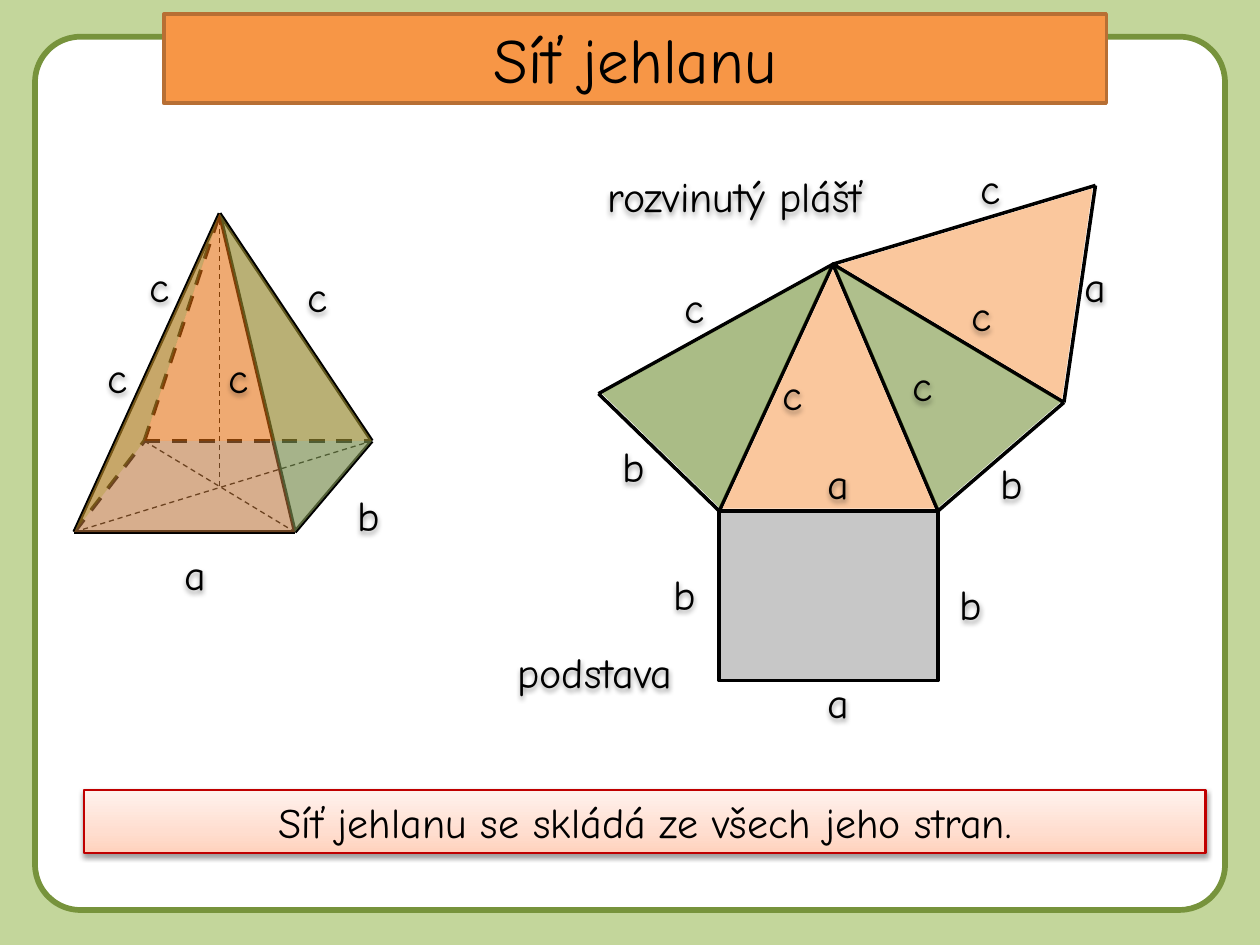
from copy import deepcopy
from dataclasses import dataclass

from lxml import etree
from pptx import Presentation
from pptx.dml.color import RGBColor
from pptx.enum.dml import MSO_LINE
from pptx.enum.shapes import MSO_CONNECTOR, MSO_SHAPE
from pptx.enum.text import MSO_ANCHOR, PP_ALIGN
from pptx.oxml.ns import qn
from pptx.util import Pt

STRAIGHT = MSO_CONNECTOR.STRAIGHT
RECT = MSO_SHAPE.RECTANGLE
ROUNDED = MSO_SHAPE.ROUNDED_RECTANGLE
DASH = MSO_LINE.DASH
CENTER = PP_ALIGN.CENTER
MIDDLE = MSO_ANCHOR.MIDDLE


@dataclass(frozen=True)
class Theme:
    font: str = "Comic Neue"
    title_size: int = 36
    body_size: int = 24
    ink: str = "000000"
    page: str = "C3D69B"
    panel: str = "FFFFFF"
    green: str = "77933C"
    orange: str = "F79646"
    brown: str = "B76F34"
    deep_orange: str = "E46C0A"
    peach: str = "FAC090"
    gray: str = "808080"
    red: str = "C00000"
    banner: tuple = ((0, "FFD2BD"), (0.35, "FFDED0"), (1, "FFF2ED"))


THEME = Theme()
LABEL_HEIGHT = 36
LABEL_WIDTHS = {"a": 34, "b": 28, "c": 50, "rozvinutý plášť": 210, "podstava": 142}


def rgb(value):
    return RGBColor.from_string(value)


def style_line(sp, color, width, dash=None):
    sp.line.color.rgb = rgb(color)
    sp.line.width = Pt(width)
    if dash:
        sp.line.dash_style = dash


def style_fill(sp, color, alpha=100):
    sp.fill.solid()
    sp.fill.fore_color.rgb = rgb(color)
    if alpha < 100:
        clr = sp._element.spPr.find(qn("a:solidFill"))[0]
        etree.SubElement(clr, qn("a:alpha"), val=str(alpha * 1000))


def add_shadow(sp):
    sp.shadow.inherit = False
    effects = sp._element.spPr.find(qn("a:effectLst"))
    shadow = etree.SubElement(effects, qn("a:outerShdw"), blurRad=str(Pt(3.1)),
                              dist=str(Pt(1.6)), dir="5400000", rotWithShape="0")
    clr = etree.SubElement(shadow, qn("a:srgbClr"), val=THEME.ink)
    etree.SubElement(clr, qn("a:alpha"), val="38000")


def set_text(sp, text, size):
    tf = sp.text_frame
    tf.text = text
    tf.word_wrap = True
    tf.vertical_anchor = MIDDLE
    p = tf.paragraphs[0]
    p.alignment = CENTER
    font = p.runs[0].font
    font.name = THEME.font
    font.size = Pt(size)
    font.color.rgb = rgb(THEME.ink)


def add_box(shapes, kind, x, y, w, h):
    sp = shapes.add_shape(kind, Pt(x), Pt(y), Pt(w), Pt(h))
    sp.shadow.inherit = False
    return sp


def add_edge(shapes, start, end, width, dash=None):
    line = shapes.add_connector(STRAIGHT, *(Pt(v) for v in start + end))
    style_line(line, THEME.ink, width, dash)
    etree.SubElement(line._element.spPr, qn("a:effectLst"))


def add_path(shapes, points, close):
    first, *rest = [(Pt(x), Pt(y)) for x, y in points]
    builder = shapes.build_freeform(*first)
    builder.add_line_segments(rest, close=close)
    sp = builder.convert_to_shape()
    sp.shadow.inherit = False
    return sp


def add_face(shapes, points, color, alpha):
    sp = add_path(shapes, points, True)
    style_fill(sp, color, alpha)
    sp.line.fill.background()


def add_labels(shapes, left, top, labels):
    for text, x, y in labels:
        sp = shapes.add_textbox(Pt(left + x), Pt(top + y),
                                Pt(LABEL_WIDTHS[text]), Pt(LABEL_HEIGHT))
        set_text(sp, text, THEME.body_size)
        add_shadow(sp)


def place(points, left, top):
    return {name: (left + x, top + y) for name, (x, y) in points.items()}


def inset(points, factor=0.97):
    cx, cy = (sum(axis) / len(points) for axis in zip(*points))
    return [(cx + (x - cx) * factor, cy + (y - cy) * factor) for x, y in points]


def draw_panel(s, x, y, w, h):
    sp = add_box(s.shapes, ROUNDED, x, y, w, h)
    sp.adjustments[0] = 0.052
    style_fill(sp, THEME.panel)
    style_line(sp, THEME.green, 3.25)


def draw_title(s, x, y, w, h):
    sp = s.shapes.title
    s.shapes._spTree.append(sp._element)
    sp.left, sp.top, sp.width, sp.height = (Pt(v) for v in (x, y, w, h))
    style_fill(sp, THEME.orange)
    style_line(sp, THEME.brown, 2)
    set_text(sp, "Síť jehlanu", THEME.title_size)


def draw_pyramid(s, left, top):
    v = place({"A": (0, 182), "B": (126, 182), "C": (170, 130), "D": (40, 130),
               "V": (83, 0), "S": (83, 156)}, left, top)
    group = s.shapes.add_group_shape().shapes
    for names, width, dash in (("AB BC AV BV CV", 2.25, None),
                               ("DC AD DV", 2.25, DASH),
                               ("AC DB SV", 0.75, DASH)):
        for start, end in names.split():
            add_edge(group, v[start], v[end], width, dash)
    for names, color, alpha in (("ABCD", THEME.gray, 36), ("ADV", THEME.green, 51),
                                ("DCV", THEME.deep_orange, 35),
                                ("ABV", THEME.deep_orange, 34),
                                ("BCV", THEME.green, 47)):
        add_face(s.shapes, [v[n] for n in names], color, alpha)
    add_labels(s.shapes, left, top, (
        ("a", 52, 188), ("b", 154, 154), ("c", 114, 29),
        ("c", 69, 75), ("c", 0, 75), ("c", 24, 23)))


def draw_net(s, left, top):
    v = place({"V": (134, 45), "P": (0, 119), "Q": (69, 186), "R": (194, 186),
               "S": (266, 124), "T": (284, 0)}, left, top)
    base = add_box(s.shapes, RECT, *v["Q"], 125, 97)
    style_fill(base, THEME.gray, 44)
    style_line(base, THEME.ink, 2)
    faces = (("PVQ", THEME.green, 62), ("RVS", THEME.green, 59),
             ("QVR", THEME.peach, 88), ("TVS", THEME.peach, 88))
    for names, _, _ in faces:
        points = [v[n] for n in names]
        group = s.shapes.add_group_shape().shapes
        sides = add_path(group, points, False)
        sides.fill.background()
        style_line(sides, THEME.ink, 2)
        add_edge(group, points[0], points[2], 2)
    for names, color, alpha in faces:
        add_face(s.shapes, inset([v[n] for n in names]), color, alpha)
    add_labels(s.shapes, left, top, (
        ("rozvinutý plášť", -27, -12), ("podstava", -73, 260),
        ("a", 120, 277), ("b", 199, 221), ("c", 86, 101), ("c", 30, 51),
        ("c", 199, -17), ("c", 194, 56), ("c", 160, 96), ("b", 222, 152),
        ("b", 6, 142), ("a", 267, 39), ("a", 120, 152), ("b", 35, 215)))


def draw_banner(s, x, y, w, h):
    sp = add_box(s.shapes, RECT, x, y, w, h)
    sp.fill.gradient()
    sp.fill.gradient_angle = 90
    stops = sp._element.spPr.find(qn("a:gradFill")).find(qn("a:gsLst"))
    stops.append(deepcopy(stops[-1]))
    for stop, (position, color) in zip(sp.fill.gradient_stops, THEME.banner):
        stop.position = position
        stop.color.rgb = rgb(color)
    style_line(sp, THEME.red, 1.5)
    add_shadow(sp)
    set_text(sp, "Síť jehlanu se skládá ze všech jeho stran.", THEME.body_size)


def main():
    prs = Presentation()
    prs.slide_width, prs.slide_height = Pt(720), Pt(540)
    s = prs.slides.add_slide(prs.slide_layouts[5])
    s.background.fill.solid()
    s.background.fill.fore_color.rgb = rgb(THEME.page)
    draw_panel(s, 20, 21, 680, 499)
    draw_title(s, 93.6, 8, 538.6, 51)
    draw_pyramid(s, 42.5, 122)
    draw_net(s, 342, 106)
    draw_banner(s, 48, 451.5, 641, 36)
    prs.save("out.pptx")


if __name__ == "__main__":
    main()
